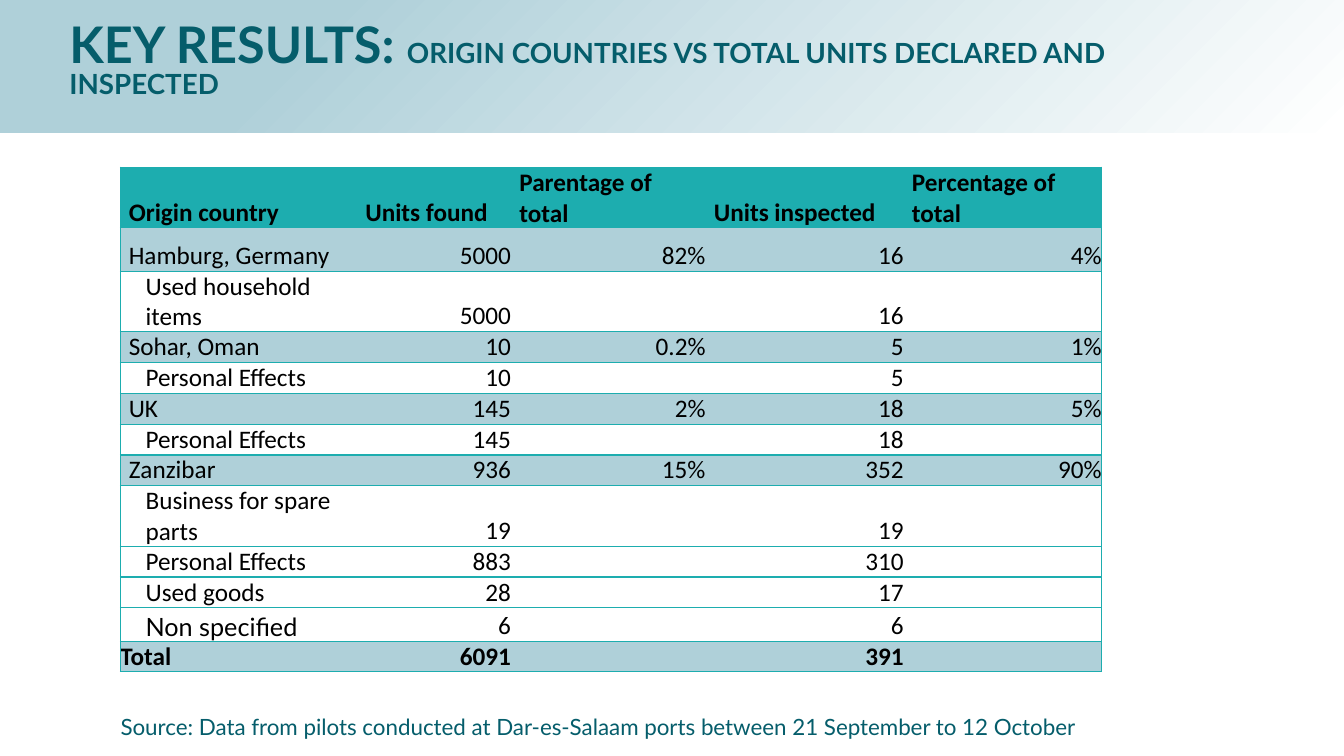
from lxml import etree
from pptx import Presentation
from pptx.dml.color import RGBColor
from pptx.enum import shapes, text
from pptx.oxml import ns
from pptx.util import Pt

TEAL, PALE, WHITE, DARK, BLACK = "1DADAF", "AFD0D9", "FFFFFF", "055D6B", "000000"
NO_GRID_STYLE = "{2D5ABB26-0587-4C30-8999-92F81FD0307C}"

COLUMN_WIDTHS = [169, 110, 139, 141.5, 141.5]
HEADINGS = ["Origin country", "Units found", "Parentage of total",
            "Units inspected", "Percentage of total"]
# Kind of row, height, values
ROWS = [
    ("header", 16, HEADINGS),
    ("country", 31, ["Hamburg, Germany", "5000", "82%", "16", "4%"]),
    ("item", 22, ["Used household items", "5000", "", "16", ""]),
    ("country", 22, ["Sohar, Oman", "10", "0.2%", "5", "1%"]),
    ("item", 22, ["Personal Effects", "10", "", "5", ""]),
    ("country", 22, ["UK", "145", "2%", "18", "5%"]),
    ("item", 22, ["Personal Effects", "145", "", "18", ""]),
    ("country", 22, ["Zanzibar", "936", "15%", "352", "90%"]),
    ("item", 22, ["Business for spare parts", "19", "", "19", ""]),
    ("item", 22, ["Personal Effects", "883", "", "310", ""]),
    ("item", 22, ["Used goods", "28", "", "17", ""]),
    ("item", 24, ["Non specified", "6", "", "6", ""]),
    ("total", 15, ["Total", "6091", "", "391", ""]),
]
# Fill, bold, left inset and indent of the first column
ROW_LOOKS = {
    "header": (TEAL, True, 0, 6),
    "country": (PALE, False, 0, 6),
    "item": (WHITE, False, 6.5, 11.5),
    "total": (PALE, True, 0, 0),
}


def colour(value):
    return RGBColor.from_string(value)


def add_span(para, words, size, shade, font="Lato", bold=False):
    span = para.add_run()
    span.text = words
    span.font.size = Pt(size)
    span.font.name = font
    span.font.bold = bold
    span.font.color.rgb = colour(shade)


def add_box(page, left, top, width, height):
    box = page.shapes.add_textbox(Pt(left), Pt(top), Pt(width), Pt(height))
    box.text_frame.word_wrap = True
    return box.text_frame


def add_border(cell, side):
    properties = cell._tc.get_or_add_tcPr()
    line = etree.SubElement(properties, ns.qn("a:ln" + side), w=str(Pt(1)))
    fill = etree.SubElement(line, ns.qn("a:solidFill"))
    etree.SubElement(fill, ns.qn("a:srgbClr"), val=TEAL)


def draw_header(page, left, top, width, height):
    # Gradient band
    band = page.shapes.add_shape(shapes.MSO_SHAPE.RECTANGLE,
                                 Pt(left), Pt(top), Pt(width), Pt(height))
    band.shadow.inherit = False
    band.line.fill.background()
    band.fill.gradient()
    band.fill.gradient_angle = 315
    for stop, position, shade in zip(band.fill.gradient_stops, (0.23, 1), (PALE, WHITE)):
        stop.position = position
        stop.color.rgb = colour(shade)

    # Title
    frame = add_box(page, left + 42.5, top + 18, width - 127.5, height - 38)
    frame.vertical_anchor = text.MSO_ANCHOR.BOTTOM
    para = frame.paragraphs[0]
    para.line_spacing = 0.8
    add_span(para, "KEY RESULTS: ", 36, DARK, bold=True)
    add_span(para, "ORIGIN COUNTRIES VS TOTAL UNITS DECLARED AND INSPECTED",
             19.8, DARK, bold=True)


def fill_cell(cell, words, kind, column):
    fill, bold, inset, indent = ROW_LOOKS[kind]
    first, last = column == 0, column == len(COLUMN_WIDTHS) - 1
    cell.margin_left = Pt(inset if first else 0)
    cell.margin_right = cell.margin_top = cell.margin_bottom = 0
    cell.vertical_anchor = text.MSO_ANCHOR.BOTTOM
    for side in ("L" if first else "") + ("R" if last else "") + "TB":
        add_border(cell, side)
    cell.fill.solid()
    cell.fill.fore_color.rgb = colour(fill)
    if not words:
        return
    para = cell.text_frame.paragraphs[0]
    if first or kind == "header":
        para._p.get_or_add_pPr().set("marL", str(Pt(indent)))
    else:
        para.alignment = text.PP_ALIGN.RIGHT
    font = "Lato" if words == "Non specified" else "Calibri"
    add_span(para, words, 18, BLACK, font, bold)


def draw_table(page, left, top, width, height):
    frame = page.shapes.add_table(len(ROWS), len(COLUMN_WIDTHS),
                                  Pt(left), Pt(top), Pt(width), Pt(height))
    table = frame.table
    table.first_row = table.horz_banding = False
    table._tbl.tblPr.find(ns.qn("a:tableStyleId")).text = NO_GRID_STYLE
    for column, column_width in zip(table.columns, COLUMN_WIDTHS):
        column.width = Pt(column_width)
    for row, (kind, row_height, values) in zip(table.rows, ROWS):
        row.height = Pt(row_height)
        for column, words in enumerate(values):
            fill_cell(row.cells[column], words, kind, column)
    frame.height = Pt(height)


def draw_source(page, left, top, width, height):
    para = add_box(page, left, top, width, height).paragraphs[0]
    add_span(para, "Source: Data from pilots conducted at Dar-es-Salaam ports "
             "between 21 September to 12 October", 16, DARK)


def main():
    deck = Presentation()
    deck.slide_width, deck.slide_height = Pt(960), Pt(540)
    page = deck.slides.add_slide(deck.slide_layouts[6])
    draw_header(page, 0, 0, 960, 95)
    draw_table(page, 86, 119.5, 701, 360)
    draw_source(page, 79, 505.5, 796, 26.5)
    deck.save("out.pptx")


if __name__ == "__main__":
    main()
